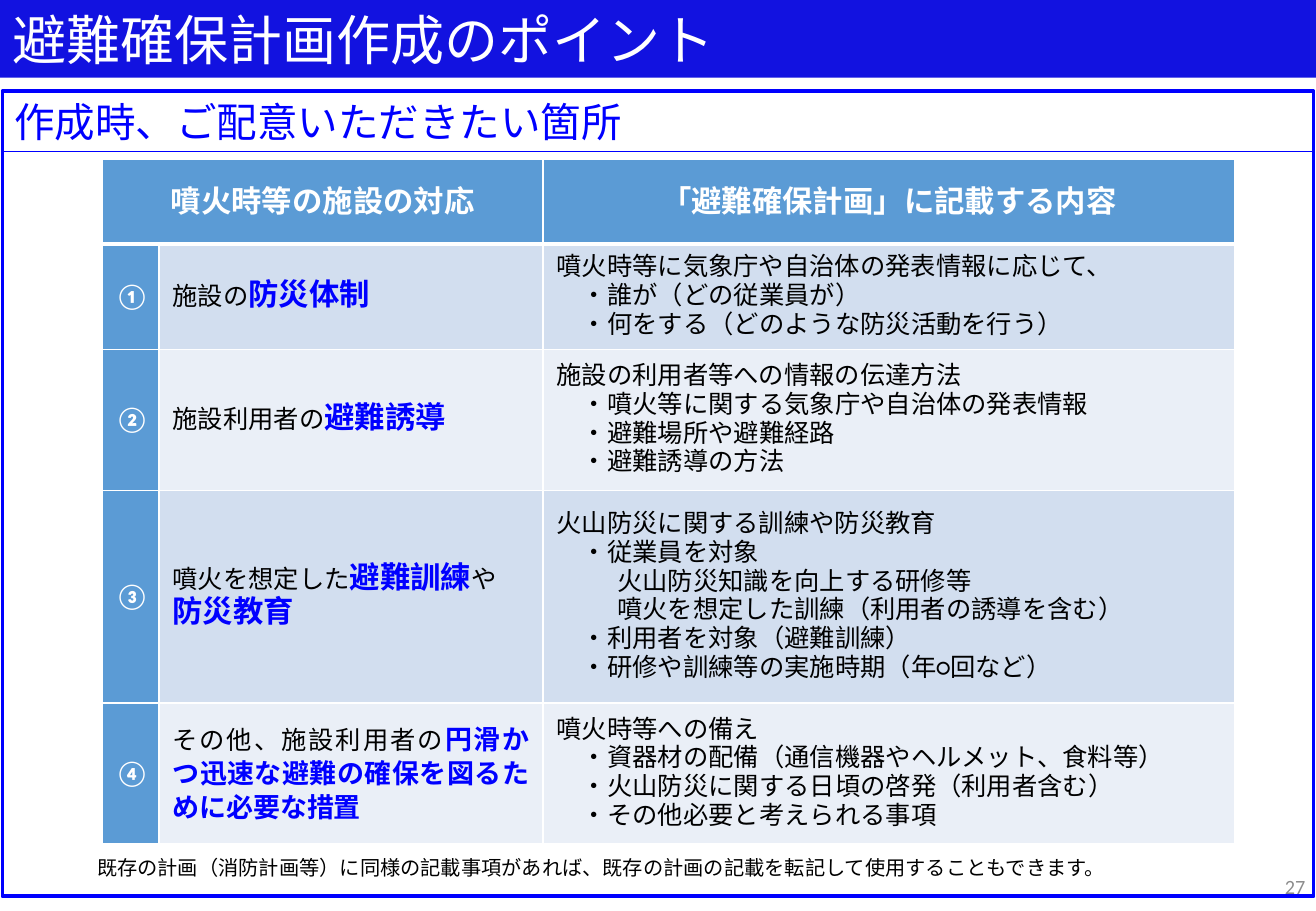
from lxml import etree
from pptx import Presentation
from pptx.dml.color import RGBColor
from pptx.enum.shapes import MSO_SHAPE
from pptx.enum.text import MSO_ANCHOR, PP_ALIGN
from pptx.oxml.ns import qn
from pptx.util import Inches, Pt

RECTANGLE = MSO_SHAPE.RECTANGLE
MIDDLE = MSO_ANCHOR.MIDDLE
LEFT, CENTER, RIGHT, JUSTIFY = PP_ALIGN.LEFT, PP_ALIGN.CENTER, PP_ALIGN.RIGHT, PP_ALIGN.JUSTIFY

WHITE, BLACK, BLUE, GRAY = "FFFFFF", "000000", "0000FF", "8C8C8C"
TITLE_BLUE, HEADER_BLUE = "1212E0", "5B9BD5"
BANDS = ("D2DEEF", "EAEFF7")
BODY_FONT = "Calibri"
BULLET_INDENT, DETAIL_INDENT = 0.21, 0.5

HEADINGS = ("噴火時等の施設の対応", "「避難確保計画」に記載する内容")
COLUMN_WIDTHS = (0.47, 3.16, 5.69)
ROW_HEIGHTS = (0.7, 0.87, 1.16, 1.75, 1.16)

# Each row: number, emphasis size, response paragraphs of (text, emphasised), plan lines
ROWS = [
    ("①", 18, [[("施設の", False), ("防災体制", True)]],
     ["噴火時等に気象庁や自治体の発表情報に応じて、",
      "・誰が（どの従業員が）",
      "・何をする（どのような防災活動を行う）"]),
    ("②", 18, [[("施設利用者の", False), ("避難誘導", True)]],
     ["施設の利用者等への情報の伝達方法",
      "・噴火等に関する気象庁や自治体の発表情報",
      "・避難場所や避難経路",
      "・避難誘導の方法"]),
    ("③", 18, [[("噴火を想定した", False), ("避難訓練", True), ("や", False)],
               [("防災教育", True)]],
     ["火山防災に関する訓練や防災教育",
      "・従業員を対象",
      "火山防災知識を向上する研修等",
      "噴火を想定した訓練（利用者の誘導を含む）",
      "・利用者を対象（避難訓練）",
      "・研修や訓練等の実施時期（年○回など）"]),
    ("④", 16, [[("その他、施設利用者の", False),
                ("円滑かつ迅速な避難の確保を図るために必要な措置", True)]],
     ["噴火時等への備え",
      "・資器材の配備（通信機器やヘルメット、食料等）",
      "・火山防災に関する日頃の啓発（利用者含む）",
      "・その他必要と考えられる事項"]),
]


def color(hex_string):
    return RGBColor.from_string(hex_string)


class SlideBuilder:
    def __init__(self, presentation):
        self.slide = presentation.slides.add_slide(presentation.slide_layouts[5])

    def format_run(self, run, size, hex_color, bold=False, font=BODY_FONT):
        run.font.size = Pt(size)
        run.font.bold = bold
        run.font.name = font
        run.font.color.rgb = color(hex_color)
        east_asian = etree.Element(qn("a:ea"), typeface=font)
        run.font._element.find(qn("a:latin")).addnext(east_asian)

    def set_text(self, text_frame, text, size, hex_color, font=BODY_FONT, align=LEFT):
        text_frame.text = text
        text_frame.word_wrap = True
        text_frame.vertical_anchor = MIDDLE
        paragraph = text_frame.paragraphs[0]
        paragraph.alignment = align
        self.format_run(paragraph.runs[0], size, hex_color, font=font)

    def title(self, text, box):
        shape = self.slide.shapes.title
        shape.left, shape.top, shape.width, shape.height = map(Inches, box)
        shape.fill.solid()
        shape.fill.fore_color.rgb = color(TITLE_BLUE)
        self.set_text(shape.text_frame, text, 32, WHITE, "Noto Sans CJK JP")

    def outline(self, box, width):
        shape = self.slide.shapes.add_shape(RECTANGLE, *map(Inches, box))
        shape.shadow.inherit = False
        shape.fill.background()
        shape.line.color.rgb = color(BLUE)
        shape.line.width = Pt(width)
        return shape

    def text_box(self, text, box, hex_color, align=LEFT):
        shape = self.slide.shapes.add_textbox(*map(Inches, box))
        self.set_text(shape.text_frame, text, 12, hex_color, align=align)

    def table(self, box):
        frame = self.slide.shapes.add_table(
            len(ROW_HEIGHTS), len(COLUMN_WIDTHS), *map(Inches, box))
        table = frame.table
        for column, width in zip(table.columns, COLUMN_WIDTHS):
            column.width = Inches(width)
        for row, height in zip(table.rows, ROW_HEIGHTS):
            row.height = Inches(height)
        return table

    def borders(self, cell, bottom):
        properties = cell._tc.get_or_add_tcPr()
        widths = {"a:lnL": 1, "a:lnR": 1, "a:lnT": 1, "a:lnB": bottom}
        for position, (tag, width) in enumerate(widths.items()):
            line = etree.Element(qn(tag), w=str(Pt(width)))
            fill = etree.SubElement(line, qn("a:solidFill"))
            etree.SubElement(fill, qn("a:srgbClr"), val=WHITE)
            properties.insert(position, line)

    def cell(self, cell, fill, paragraphs, align=JUSTIFY, spacing=None, bottom=1):
        """Each paragraph is (indent, runs); each run is (text, size, color, bold)."""
        cell.fill.solid()
        cell.fill.fore_color.rgb = color(fill)
        self.borders(cell, bottom)
        cell.vertical_anchor = MIDDLE
        cell.margin_left = cell.margin_right = Inches(0.11)
        cell.margin_top = cell.margin_bottom = 0
        text_frame = cell.text_frame
        text_frame.text = "\n".join("".join(run[0] for run in runs) for _, runs in paragraphs)
        for paragraph, (indent, runs) in zip(text_frame.paragraphs, paragraphs):
            paragraph.alignment = align
            if spacing:
                paragraph.line_spacing = Pt(spacing)
            if indent:
                paragraph._p.get_or_add_pPr().set("marL", str(Inches(indent)))
            paragraph.clear()
            for text, size, hex_color, bold in runs:
                run = paragraph.add_run()
                run.text = text
                self.format_run(run, size, hex_color, bold)


def plan_indent(index, line):
    if index == 0:
        return 0
    return BULLET_INDENT if line.startswith("・") else DETAIL_INDENT


def main():
    presentation = Presentation()
    presentation.slide_width = Inches(10.83)
    presentation.slide_height = Inches(7.5)
    builder = SlideBuilder(presentation)

    # Title bar, subtitle and frame
    builder.title("避難確保計画作成のポイント", (0, 0, 10.83, 0.64))
    subtitle = builder.outline((0.02, 0.75, 10.79, 0.5), 0.75)
    builder.set_text(subtitle.text_frame, "作成時、ご配意いただきたい箇所", 24, BLUE, "Arial")
    builder.outline((0.02, 0.75, 10.79, 6.63), 2.25)

    # Table header
    table = builder.table((0.84, 1.31, 9.32, 5.64))
    table.cell(0, 0).merge(table.cell(0, 1))
    for column, heading in zip((0, 2), HEADINGS):
        builder.cell(table.cell(0, column), HEADER_BLUE,
                     [(0, [(heading, 18, WHITE, True)])], CENTER, bottom=3)

    # Table body
    for index, (number, emphasis_size, responses, plan) in enumerate(ROWS):
        number_cell, response_cell, plan_cell = table.rows[index + 1].cells
        band = BANDS[index % 2]
        builder.cell(number_cell, HEADER_BLUE, [(0, [(number, 15, WHITE, True)])])
        response = [(0, [(text, emphasis_size, BLUE, True) if strong
                         else (text, 15, BLACK, False) for text, strong in runs])
                    for runs in responses]
        builder.cell(response_cell, band, response, spacing=20)
        plan_lines = [(plan_indent(position, line), [(line, 15, BLACK, False)])
                      for position, line in enumerate(plan)]
        builder.cell(plan_cell, band, plan_lines, spacing=17)

    # Footnote and page number
    builder.text_box("既存の計画（消防計画等）に同様の記載事項があれば、"
                     "既存の計画の記載を転記して使用することもできます。",
                     (0.7, 6.99, 9.72, 0.3), BLACK)
    builder.text_box("27", (8.4, 7.1, 2.44, 0.4), GRAY, RIGHT)

    presentation.save("out.pptx")


if __name__ == "__main__":
    main()
